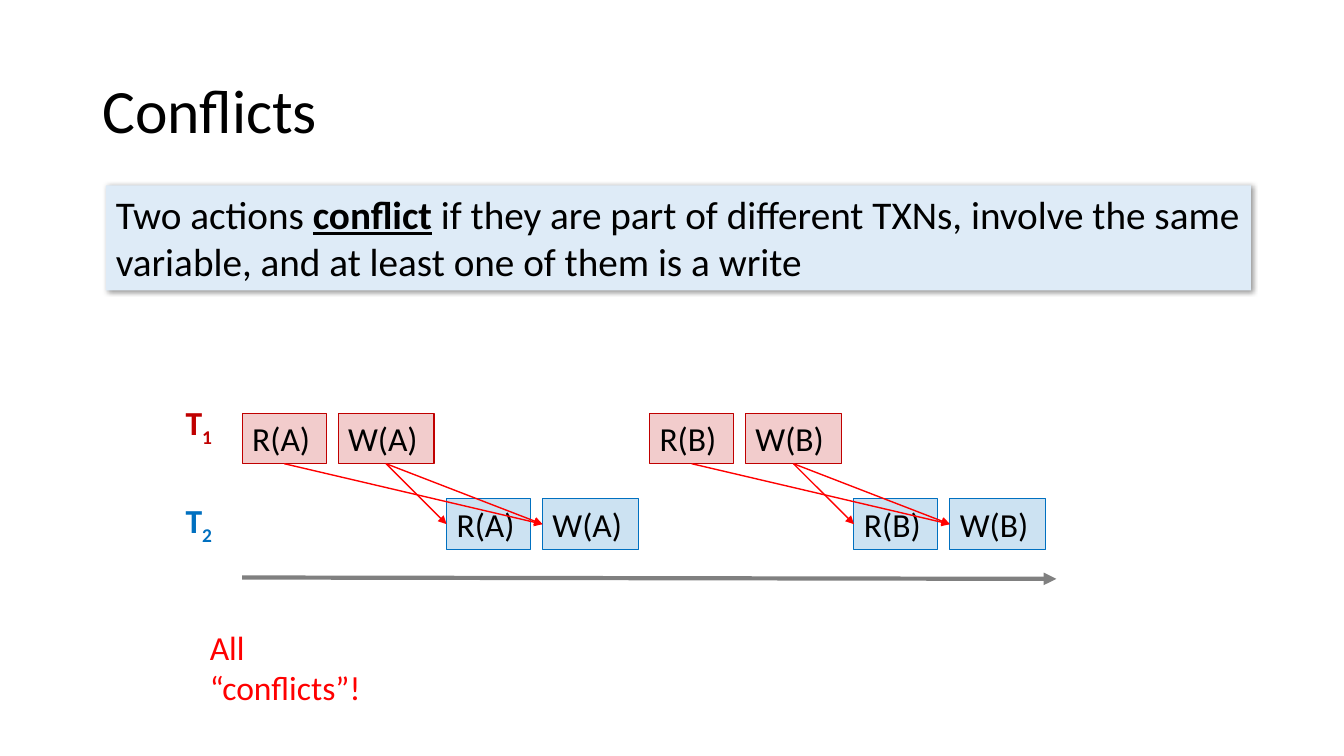
import pptx
import pptx.util
import pptx.dml.color
import pptx.enum.shapes
import pptx.enum.text
import pptx.oxml
import pptx.oxml.ns
from dataclasses import dataclass
from lxml import etree

Pt = pptx.util.Pt
Fit = pptx.enum.text.MSO_AUTO_SIZE
Anchor = pptx.enum.text.MSO_ANCHOR


@dataclass(frozen=True)
class Theme:
    """Colours, font and type sizes of the slide."""
    font: str = "Calibri"
    ink: str = "000000"
    panel: str = "DEEBF7"
    first: str = "C00000"
    second: str = "0070C0"
    clash: str = "FF0000"
    axis: str = "808080"
    title: int = 44
    body: int = 28
    label: int = 24


THEME = Theme()


def rgb(code):
    """Turn a hex code into a colour."""
    return pptx.dml.color.RGBColor.from_string(code)


def sub(node, tag, **attrs):
    """Append a drawing element to a node."""
    child = etree.SubElement(node, pptx.oxml.ns.qn("a:" + tag))
    for key, value in attrs.items():
        child.set(key, str(value))
    return child


def write(shape, runs, size, color=THEME.ink, anchor=Anchor.TOP, wrap=True, fit=Fit.SHAPE_TO_FIT_TEXT):
    """Fill a shape with one left-aligned paragraph of styled runs."""
    frame = shape.text_frame
    frame.word_wrap = wrap
    frame.auto_size = fit
    frame.vertical_anchor = anchor
    para = frame.paragraphs[0]
    para.alignment = pptx.enum.text.PP_ALIGN.LEFT
    for text, style in runs:
        run = para.add_run()
        run.text = text
        font = run.font
        font.name = THEME.font
        font.size = Pt(size)
        font.color.rgb = rgb(color)
        font.bold = "b" in style
        font.underline = "u" in style
        if "s" in style:
            run._r.get_or_add_rPr().set("baseline", "-25000")
    return para


def note(slide, box, runs, size, **style):
    """Add a text box."""
    shape = slide.shapes.add_textbox(*map(Pt, box))
    return shape, write(shape, runs, size, **style)


def panel(slide, box, fill):
    """Add a plain filled rectangle."""
    kind = pptx.enum.shapes.MSO_SHAPE.RECTANGLE
    shape = slide.shapes.add_shape(kind, *map(Pt, box))
    shape.shadow.inherit = False
    shape.fill.solid()
    shape.fill.fore_color.rgb = rgb(fill)
    shape.line.fill.background()
    return shape


def arrow(slide, start, end, color, width):
    """Add a straight arrow between two points."""
    kind = pptx.enum.shapes.MSO_CONNECTOR.STRAIGHT
    line = slide.shapes.add_connector(kind, *map(Pt, (*start, *end)))
    line.line.color.rgb = rgb(color)
    line.line.width = Pt(width)
    sub(line.line._get_or_add_ln(), "tailEnd", type="triangle")
    sub(line._element.spPr, "effectLst")


def heading(slide, box):
    """Place the slide title."""
    _, para = note(slide, box, [("Conflicts", "")], THEME.title, anchor=Anchor.MIDDLE, fit=Fit.NONE)
    para.line_spacing = 0.9


def define(slide, box):
    """Place the shadowed definition of a conflict."""
    shape = panel(slide, box, THEME.panel)
    effect = shape._element.spPr.find(pptx.oxml.ns.qn("a:effectLst"))
    shade = sub(effect, "outerShdw", blurRad=Pt(4), dist=Pt(1), dir=2700000, algn="tl", rotWithShape=0)
    sub(sub(shade, "srgbClr", val=THEME.ink), "alpha", val=40000)
    write(shape, [
        ("Two actions ", ""),
        ("conflict", "bu"),
        (" if they are part of different TXNs, involve the same variable, "
         "and at least one of them is a write", ""),
    ], THEME.body)


def action(slide, box, text, color):
    """Place one read or write of a transaction."""
    shape = panel(slide, box, color)
    tint = shape._element.spPr.find(".//" + pptx.oxml.ns.qn("a:srgbClr"))
    sub(tint, "alpha", val=20000)
    shape.line.color.rgb = rgb(color)
    shape.line.width = Pt(0.75)
    write(shape, [(text, "")], THEME.label)


def plan(slide, box):
    """Place both transactions, the time axis and the conflict arrows."""
    left, top, width, height = box
    tall, drop, shift, step = 36, 61.2, 146, 291
    ops = (("R", 0, 60), ("W", 68.5, 68.5))
    arrow(slide, (left, top + height - 1), (left + width, top + height), THEME.axis, 3)
    for row, color in enumerate((THEME.first, THEME.second)):
        tag = (left - 47.5, top - 11.5 + row * 70, 34.5, 36)
        note(slide, tag, [("T", "b"), (str(row + 1), "bs")], THEME.label, color=color, wrap=False)
        for col, item in enumerate("AB"):
            for name, dx, wide in ops:
                spot = (left + col * step + row * shift + dx, top + row * drop, wide, tall)
                action(slide, spot, f"{name}({item})", color)
    for col in range(2):
        base = left + col * step
        for src, dst in ((1, 0), (0, 1), (1, 1)):
            start = (base + ops[src][1] + ops[src][2] / 2, top + tall)
            end = (base + shift + ops[dst][1], top + drop + tall / 2)
            arrow(slide, start, end, THEME.clash, 1)


def remark(slide, box):
    """Place the closing remark, broken over two lines."""
    shape, _ = note(slide, box, [("All “conflicts”!", "")], THEME.label, color=THEME.clash, fit=Fit.NONE)
    shape.text_frame.margin_right = Pt(24)


def main():
    """Build and save the slide."""
    deck = pptx.Presentation()
    deck.slide_width, deck.slide_height = Pt(960), Pt(540)
    slide = deck.slides.add_slide(deck.slide_layouts[6])
    heading(slide, (66, 29, 828, 104))
    define(slide, (75.6, 132.5, 818, 75))
    plan(slide, (173, 295.2, 581.5, 118.3))
    remark(slide, (142.8, 444.3, 152, 65))
    deck.save("out.pptx")


if __name__ == "__main__":
    main()
